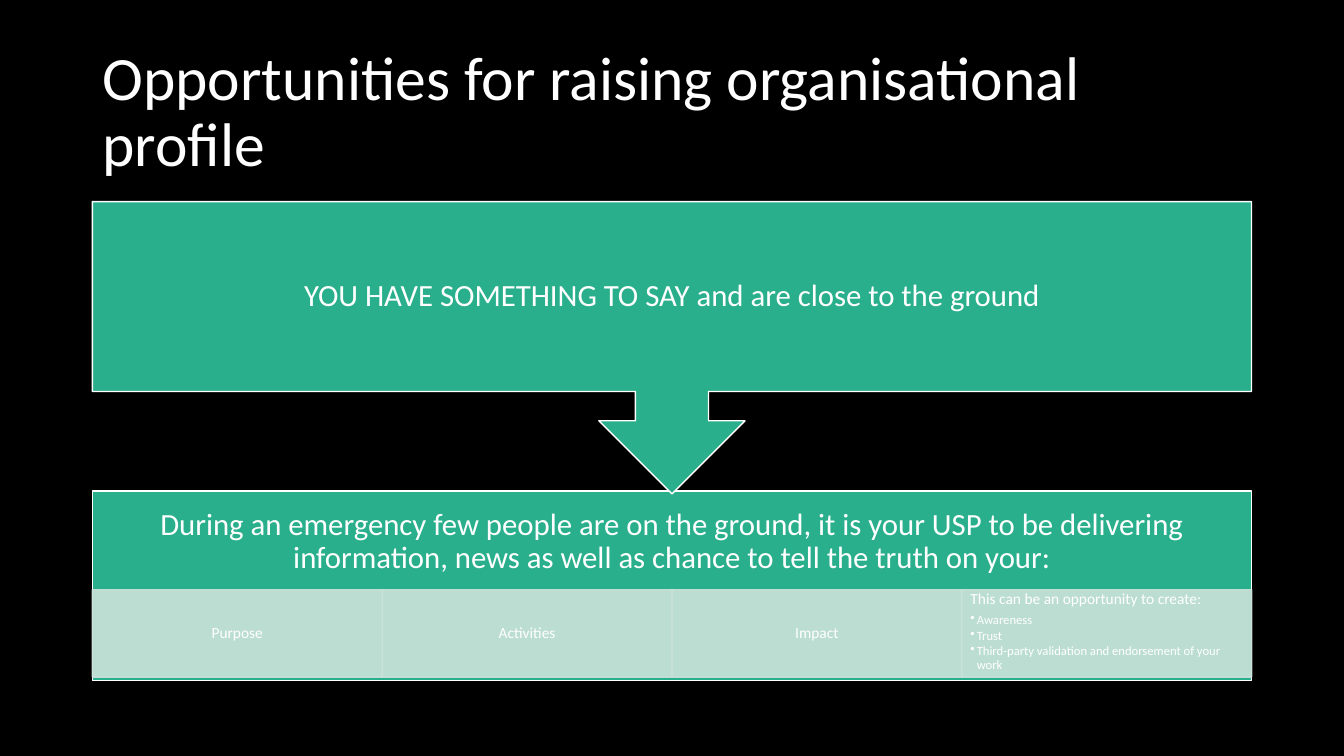
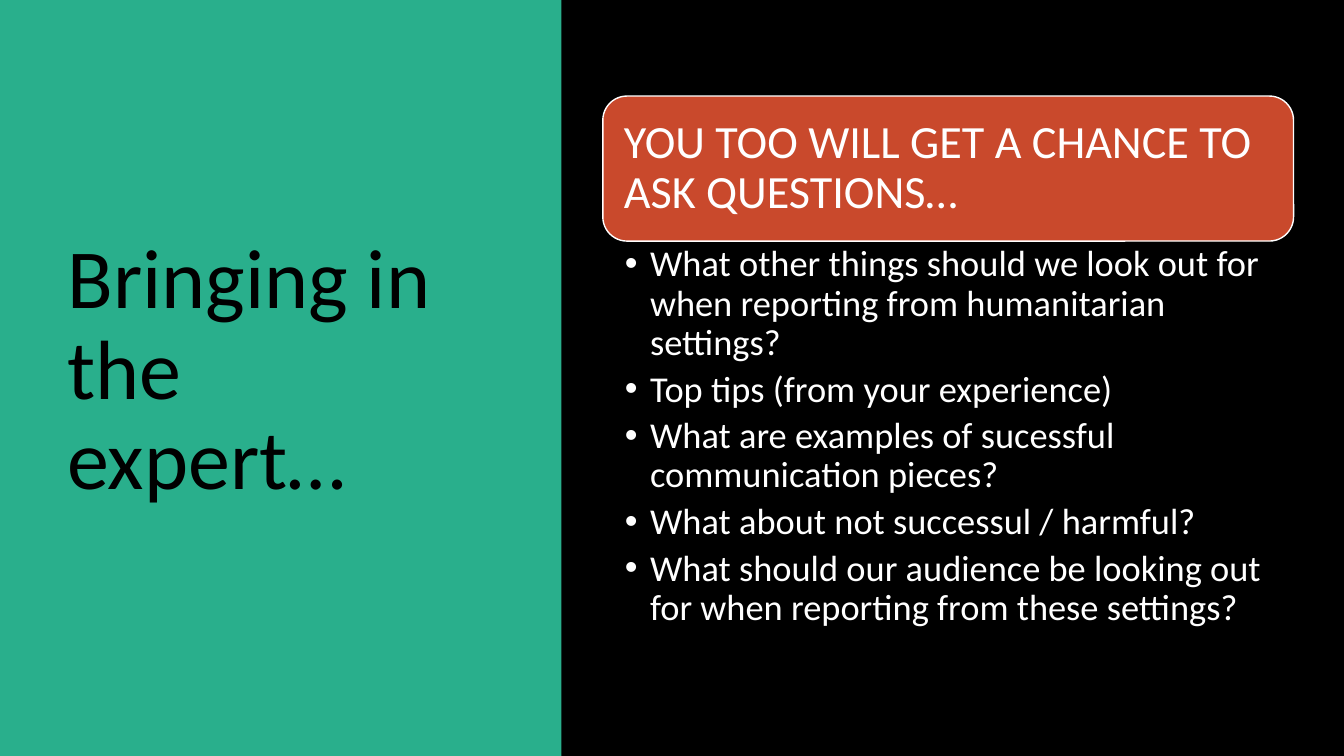
from lxml import etree
from pptx import Presentation
from pptx.dml.color import RGBColor
from pptx.enum.shapes import MSO_SHAPE
from pptx.enum.text import MSO_ANCHOR, MSO_AUTO_SIZE, PP_ALIGN
from pptx.oxml.ns import qn
from pptx.util import Pt

RECT, ROUNDED = MSO_SHAPE.RECTANGLE, MSO_SHAPE.ROUNDED_RECTANGLE
CALLOUT = MSO_SHAPE.DOWN_ARROW_CALLOUT
LEFT, CENTER = PP_ALIGN.LEFT, PP_ALIGN.CENTER
TOP, MIDDLE = MSO_ANCHOR.TOP, MSO_ANCHOR.MIDDLE
NO_FIT = MSO_AUTO_SIZE.NONE

FONT = "Calibri"
BLACK, WHITE = "000000", "FFFFFF"
GREEN, MINT, RUST = "29AF8C", "CDE3DA", "C9492C"
TITLE_ONLY, TITLE_AND_BODY = 5, 1

PROFILE_TITLE = "Opportunities for raising organisational profile"
MESSAGE = "YOU HAVE SOMETHING TO SAY and are close to the ground"
REASON = ("During an emergency few people are on the ground, it is your USP to be "
          "delivering information, news as well as chance to tell the truth on your:")
TOPICS = ["Purpose", "Activities", "Impact"]
OPPORTUNITY = "This can be an opportunity to create:"
BENEFITS = ["Awareness", "Trust", "Third-party validation and endorsement of your work"]

EXPERT_TITLE = "Bringing in the expert…"
INVITATION = "YOU TOO WILL GET A CHANCE TO ASK QUESTIONS…"
QUESTIONS = [
    "What other things should we look out for when reporting from humanitarian settings?",
    "Top tips (from your experience)",
    "What are examples of sucessful communication pieces?",
    "What about not successul / harmful?",
    "What should our audience be looking out for when reporting from these settings?",
]

MARGIN, WIDTH = 66, 828
CELL_TOP, CELL_HEIGHT = 421.2, 62.5
PANEL_WIDTH = 401
QUESTION_LEFT, QUESTION_WIDTH = 430.6, 493.4


def color(value):
    return RGBColor.from_string(value)


def place(shape, left, top, width, height):
    shape.left, shape.top = Pt(left), Pt(top)
    shape.width, shape.height = Pt(width), Pt(height)


def set_frame(shape, insets, anchor=MIDDLE):
    frame = shape.text_frame
    frame.word_wrap = True
    frame.auto_size = NO_FIT
    frame.vertical_anchor = anchor
    (frame.margin_left, frame.margin_top,
     frame.margin_right, frame.margin_bottom) = [Pt(inset) for inset in insets]
    return frame


def write(frame, lines, size, text_color=WHITE, align=LEFT, after=0, indent=0):
    for line in lines:
        para = frame.paragraphs[0] if not frame.text else frame.add_paragraph()
        para.text = line
        para.alignment = align
        para.line_spacing = 0.9
        para.space_before, para.space_after = Pt(0), Pt(after)
        para.font.name, para.font.size = FONT, Pt(size)
        para.font.color.rgb = color(text_color)
        if indent:
            properties = para._p.get_or_add_pPr()
            properties.set("marL", str(Pt(indent)))
            properties.set("indent", str(-Pt(indent)))
            bullet = etree.Element(qn("a:buChar"), char="•")
            properties.find(qn("a:spcAft")).addnext(bullet)


def add_page(deck, layout, title, size, title_color, bounds):
    page = deck.slides.add_slide(deck.slide_layouts[layout])
    page.background.fill.solid()
    page.background.fill.fore_color.rgb = color(BLACK)
    place(page.shapes.title, *bounds)
    write(set_frame(page.shapes.title, (7.2, 3.6, 7.2, 3.6)), [title], size, title_color)
    return page


def add_block(page, kind, bounds, fill, line=WHITE, opacity=None):
    block = page.shapes.add_shape(kind, *[Pt(value) for value in bounds])
    block.shadow.inherit = False
    block.fill.solid()
    block.fill.fore_color.rgb = color(fill)
    if line:
        block.line.color.rgb = color(line)
        block.line.width = Pt(1)
    else:
        block.line.fill.background()
    if opacity:
        for paint in block._element.spPr.iter(qn("a:srgbClr")):
            etree.SubElement(paint, qn("a:alpha"), val=str(opacity * 1000))
    return block


def build_profile(deck):
    page = add_page(deck, TITLE_ONLY, PROFILE_TITLE, 44, WHITE, (MARGIN, 28.8, WIDTH, 104.4))

    reason = add_block(page, RECT, (MARGIN, 350.6, WIDTH, 135.4), GREEN)
    write(set_frame(reason, (12, 12, 12, 74)), [REASON], 22, align=CENTER)

    cell_width = WIDTH / (len(TOPICS) + 1)
    for index in range(len(TOPICS) + 1):
        bounds = (MARGIN + index * cell_width, CELL_TOP, cell_width, CELL_HEIGHT)
        cell = add_block(page, RECT, bounds, MINT, MINT, 90)
        is_topic = index < len(TOPICS)
        frame = set_frame(cell, (6.2, 1.4, 6.2, 1.4), MIDDLE if is_topic else TOP)
        if is_topic:
            write(frame, [TOPICS[index]], 11, align=CENTER)
        else:
            write(frame, [OPPORTUNITY], 11, after=3.85)
            write(frame, BENEFITS, 9, after=1.35, indent=4.5)

    message = add_block(page, CALLOUT, (MARGIN, 144, WIDTH, 208.8), GREEN)
    write(set_frame(message, (12, 12, 12, 12)), [MESSAGE], 22, align=CENTER)


def build_expert(deck):
    page = add_page(deck, TITLE_AND_BODY, EXPERT_TITLE, 60, BLACK, (41, 49, 299.5, 433.4))
    panel = add_block(page, RECT, (0, 0, PANEL_WIDTH, 540), GREEN, None)
    page.shapes.title._element.addprevious(panel._element)

    invitation = add_block(page, ROUNDED, (QUESTION_LEFT, 68.6, QUESTION_WIDTH, 103.6), RUST)
    write(set_frame(invitation, (10, 10, 10, 10)), [INVITATION], 33)

    questions = page.placeholders[1]
    place(questions, QUESTION_LEFT, 172.1, QUESTION_WIDTH, 290.2)
    frame = set_frame(questions, (15.7, 3.3, 18.5, 3.3), TOP)
    write(frame, QUESTIONS, 26, after=5.2, indent=18)


def main():
    deck = Presentation()
    deck.slide_width, deck.slide_height = Pt(960), Pt(540)
    build_profile(deck)
    build_expert(deck)
    deck.save("out.pptx")


if __name__ == "__main__":
    main()
